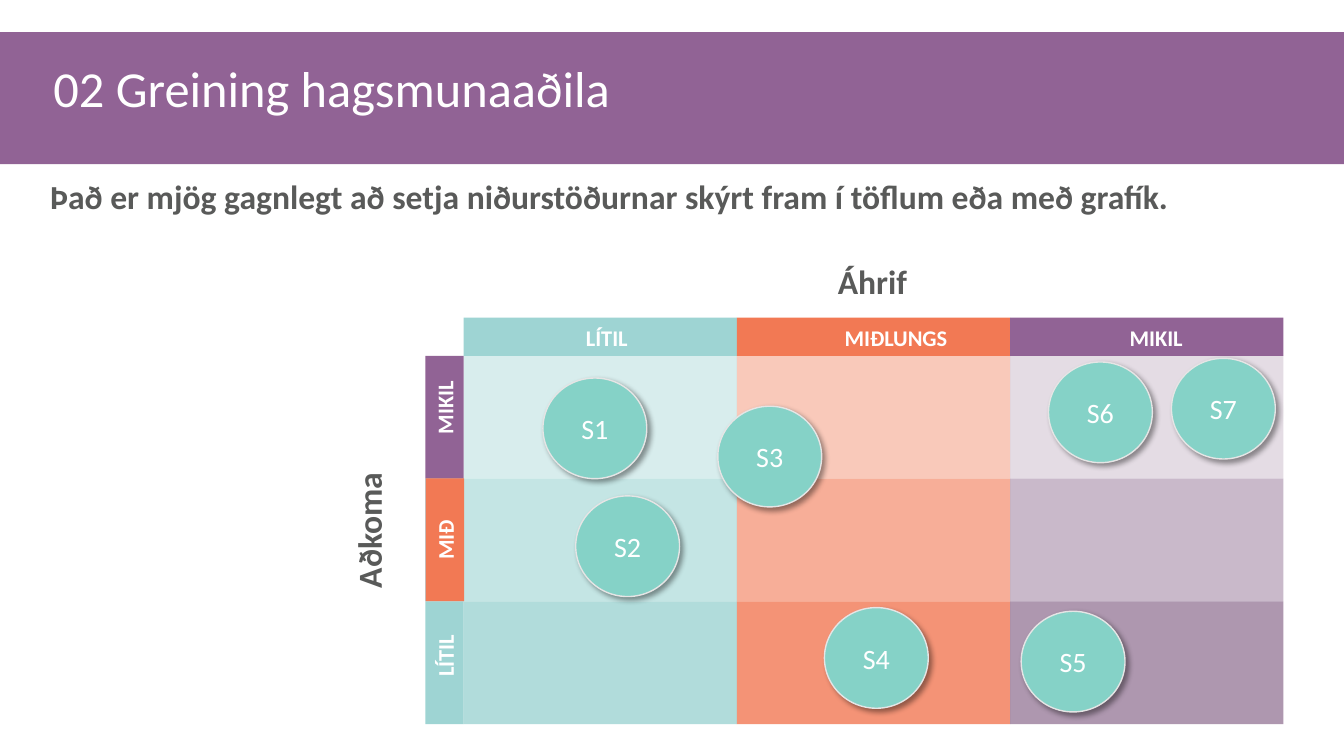
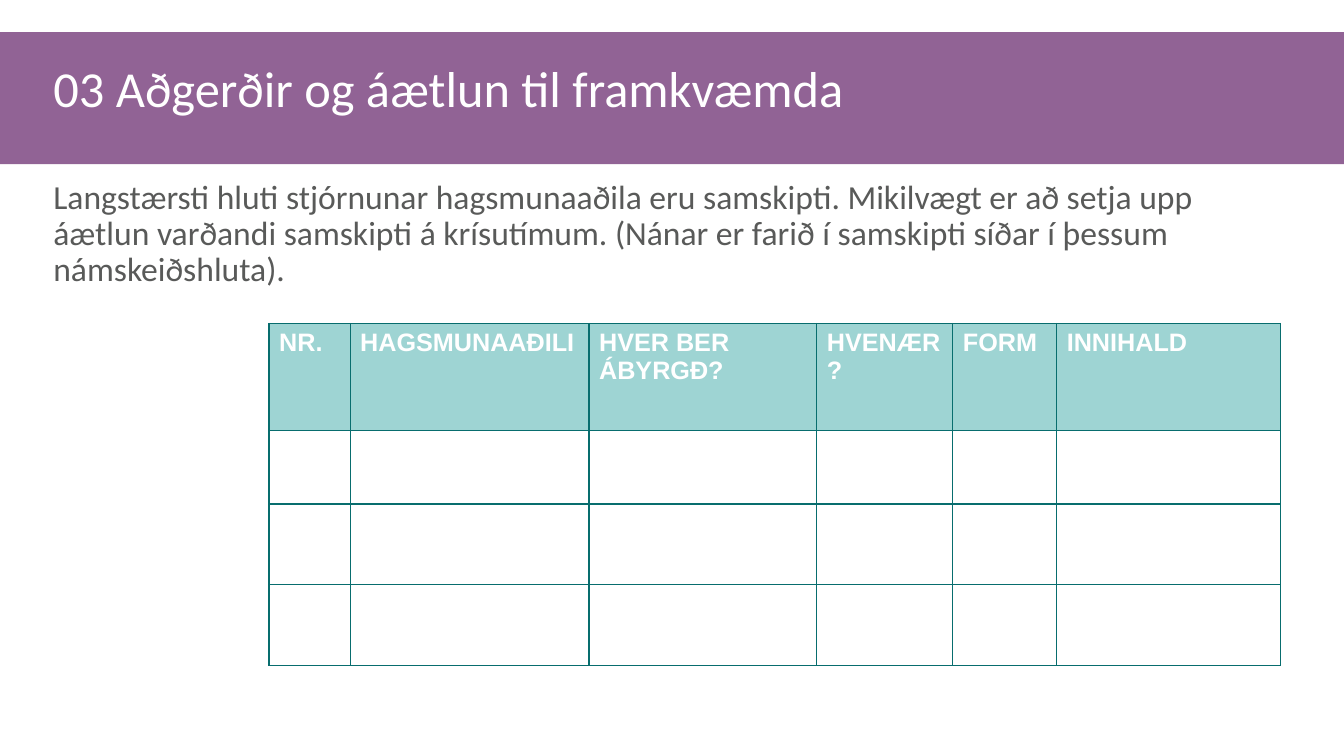
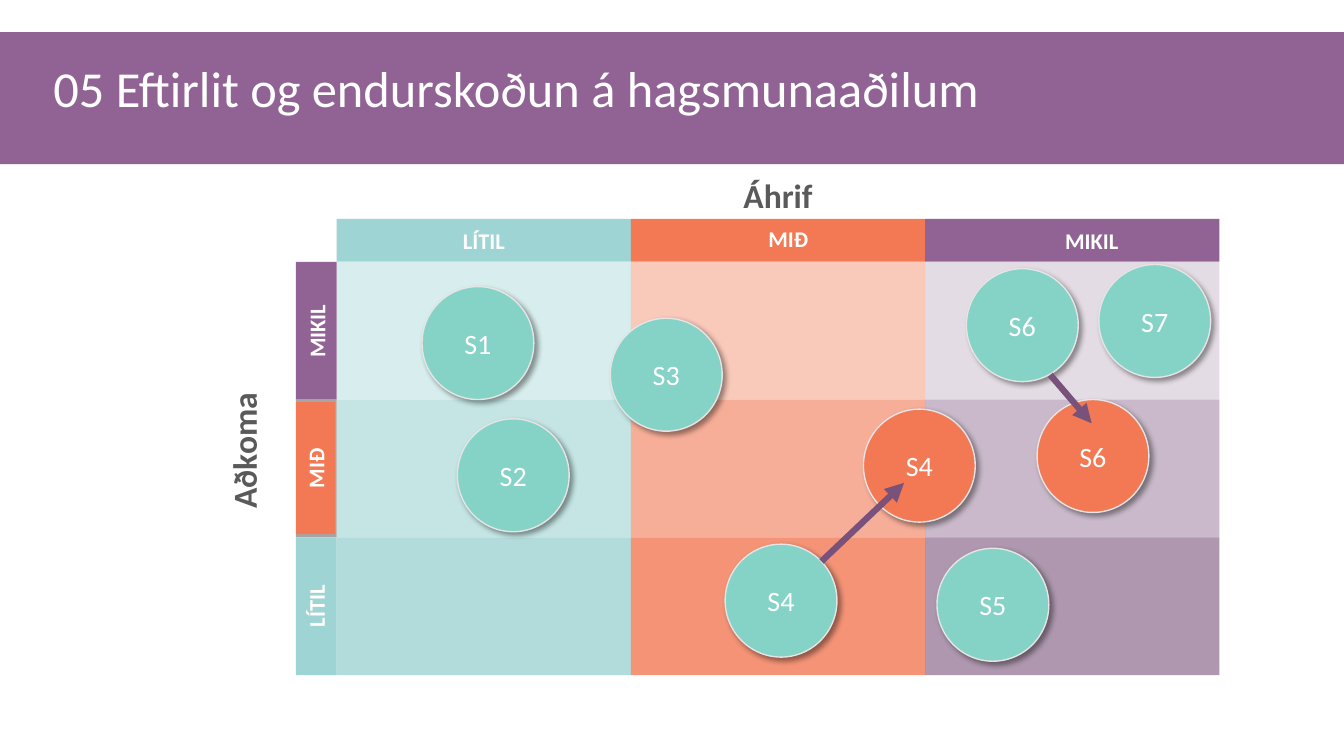
from lxml import etree
from pptx import Presentation
from pptx.dml.color import RGBColor
from pptx.enum import shapes as kind, text as txt
from pptx.oxml import parse_xml
from pptx.oxml.ns import nsdecls, qn
from pptx.util import Pt

PLUM = RGBColor(0x91, 0x63, 0x95)
DEEP = RGBColor(0x79, 0x52, 0x7B)
CORAL = RGBColor(0xF2, 0x79, 0x54)
AQUA = RGBColor(0x9E, 0xD4, 0xD3)
MINT = RGBColor(0x85, 0xD2, 0xC7)
TEAL = RGBColor(0x08, 0x6D, 0x6E)
GREY = RGBColor(0xA5, 0xA5, 0xA5)
PALE = RGBColor(0xE5, 0xE5, 0xE5)
INK = RGBColor(0x59, 0x5A, 0x59)
WHITE = RGBColor(0xFF, 0xFF, 0xFF)

TITLES = ["02 Greining hagsmunaaðila",
          "03 Aðgerðir og áætlun til framkvæmda",
          "05 Eftirlit og endurskoðun á hagsmunaaðilum"]
USEFUL = "Það er mjög gagnlegt að setja niðurstöðurnar skýrt fram í töflum eða með grafík."
COMMS = ("Langstærsti hluti stjórnunar hagsmunaaðila eru samskipti. Mikilvægt er að setja upp "
         "áætlun varðandi samskipti á krísutímum. (Nánar er farið í samskipti síðar í þessum "
         "námskeiðshluta).")
HEADS = ["NR.", "HAGSMUNAAÐILI", "HVER BER ÁBYRGÐ?", "HVENÆR?", "FORM", "INNIHALD"]
COLS = [57.9, 170.7, 162.7, 97.2, 74.2, 160]
ROWS = [76.3, 52.6, 57.6, 57.6]

TINTS = [(AQUA, 40), (CORAL, 40), (DEEP, 20)]
TOPS = [AQUA, CORAL, PLUM]
SIDES = [PLUM, GREY, AQUA]
DOTS = [("S1", .29, .18), ("S2", .41, 1.14), ("S3", .93, .41), ("S7", 2.59, .02),
        ("S6", 2.14, .05), ("S5", 2.04, 2.08), ("S4", 1.32, 2.05)]
MOVED = [("S4", 1.79, 1.07), ("S6", 2.38, 1)]
ARROWS = [(586.8, 401, 645.8, 344.9), (750.2, 267.8, 779.8, 302.4)]

FIRST = dict(x=331.2, y=226.8, wide=195.2, high=87.7, head=27.4, side=27.4,
             tops=[("LÍTIL", 433.4, 240.8), ("MIÐLUNGS", 640, 240.8), ("MIKIL", 825.8, 240.8)],
             sides=[("MIKIL", 317.5, 291.2), ("MIÐ", 317.9, 385.6), ("LÍTIL", 317.9, 468.4)],
             mid=(87.7, 27.4), axes=[("Áhrif", 623.2, 200.9, 0), ("Aðkoma", 263.2, 378.7, 270)])
LAST = dict(x=240.5, y=156.4, wide=210.2, high=98.4, head=30.6, side=29.2,
            tops=[("LÍTIL", 345.6, 171.7), ("MIÐ", 563, 170.3), ("MIKIL", 779.8, 171.7)],
            sides=[("MIKIL", 226.1, 236.5), ("MIÐ", 225.4, 334.4), ("LÍTIL", 225.7, 433.1)],
            mid=(94.3, 27.8), axes=[("Áhrif", 555.8, 139, 0), ("Aðkoma", 173.9, 321.8, 270)])


def write(frame, words, size=16, color=WHITE, bold=False, font="Calibri",
          align=txt.PP_ALIGN.LEFT, anchor=txt.MSO_ANCHOR.TOP, lines=None):
    frame.word_wrap = True
    frame.auto_size = txt.MSO_AUTO_SIZE.NONE
    frame.vertical_anchor = anchor
    para = frame.paragraphs[0]
    para.alignment = align
    para.line_spacing = lines
    run = para.add_run()
    run.text = words
    face = run.font
    face.name, face.size, face.bold = font, Pt(size), bold
    face.color.rgb = color


def block(slide, x, y, w, h, fill, alpha=100, form=kind.MSO_SHAPE.RECTANGLE):
    shape = slide.shapes.add_shape(form, Pt(x), Pt(y), Pt(w), Pt(h))
    shape.shadow.inherit = False
    shape.fill.solid()
    shape.fill.fore_color.rgb = fill
    shape.line.fill.background()
    if alpha < 100:
        tone = shape._element.spPr.find(qn("a:solidFill"))[0]
        etree.SubElement(tone, qn("a:alpha")).set("val", str(alpha * 1000))
    return shape


def label(slide, words, x, y, turn=0, w=140, h=26.6, **fmt):
    box = slide.shapes.add_textbox(Pt(x - w / 2), Pt(y - h / 2), Pt(w), Pt(h))
    box.rotation = turn
    fmt = dict(bold=True, align=txt.PP_ALIGN.CENTER, anchor=txt.MSO_ANCHOR.MIDDLE) | fmt
    write(box.text_frame, words, **fmt)


def dot(slide, words, x, y, w, h, fill):
    disc = block(slide, x, y, w, h, fill, form=kind.MSO_SHAPE.OVAL)
    disc.line.color.rgb = PALE
    disc.line.width = Pt(1)
    disc._element.spPr.find(qn("a:effectLst")).append(parse_xml(
        f'<a:outerShdw {nsdecls("a")} blurRad="50800" dist="38100" dir="2700000" algn="tl" '
        'rotWithShape="0"><a:srgbClr val="000000"><a:alpha val="40000"/></a:srgbClr></a:outerShdw>'))
    write(disc.text_frame, words, size=20, align=txt.PP_ALIGN.CENTER, anchor=txt.MSO_ANCHOR.MIDDLE)


def matrix(slide, x, y, wide, high, head, side, tops, sides, mid, axes, moved=()):
    base = y + head
    for col, (tint, low) in enumerate(TINTS):
        left = x + col * wide
        block(slide, left, y, wide, head, TOPS[col])
        for row in range(3):
            block(slide, left, base + row * high, wide, high, tint, low + 20 * row)
    for row, fill in enumerate(SIDES):
        block(slide, x - side, base + row * high, side, high, fill)
    long, thin = mid
    _, cx, cy = sides[1]
    block(slide, cx - thin / 2, cy - long / 2, thin, long, CORAL)
    for words, cx, cy in tops:
        label(slide, words, cx, cy)
    for words, cx, cy in sides:
        label(slide, words, cx, cy, 270, w=86)
    for words, cx, cy, turn in axes:
        label(slide, words, cx, cy, turn, w=160, h=36, size=24, color=INK,
              anchor=txt.MSO_ANCHOR.BOTTOM)
    for group, fill in ((DOTS, MINT), (moved, CORAL)):
        for words, col, row in group:
            dot(slide, words, x + col * wide, base + row * high, .38 * wide, .82 * high, fill)


def arrow(slide, x1, y1, x2, y2):
    line = slide.shapes.add_connector(kind.MSO_CONNECTOR.STRAIGHT, Pt(x1), Pt(y1), Pt(x2), Pt(y2))
    line.line.color.rgb = DEEP
    line.line.width = Pt(4.5)
    etree.SubElement(line.line._get_or_add_ln(), qn("a:tailEnd")).set("type", "triangle")
    etree.SubElement(line._element.spPr, qn("a:effectLst"))


def intro(slide, words, x, bold=False):
    box = slide.shapes.add_textbox(Pt(x), Pt(125.3), Pt(885), Pt(95))
    write(box.text_frame, words, size=24, color=INK, bold=bold, lines=.9)


def plan(slide):
    grid = slide.shapes.add_table(len(ROWS), len(COLS), Pt(192.2), Pt(231.1),
                                  Pt(sum(COLS)), Pt(sum(ROWS))).table
    grid.first_row = grid.horz_banding = False
    for col, wide in zip(grid.columns, COLS):
        col.width = Pt(wide)
    for row, high in zip(grid.rows, ROWS):
        row.height = Pt(high)
    for cell in grid.iter_cells():
        for edge in "LRTB":
            cell._tc.get_or_add_tcPr().append(parse_xml(
                f'<a:ln{edge} {nsdecls("a")} w="12700"><a:solidFill>'
                f'<a:srgbClr val="{TEAL}"/></a:solidFill></a:ln{edge}>'))
        cell.fill.background()
    for cell, words in zip(grid.rows[0].cells, HEADS):
        cell.fill.solid()
        cell.fill.fore_color.rgb = AQUA
        write(cell.text_frame, words, size=18, bold=True, font="Arial")


def page(deck, words):
    slide = deck.slides.add_slide(deck.slide_layouts[5])
    title = slide.shapes.title
    title.left, title.top, title.width, title.height = Pt(31), Pt(45.4), Pt(903), Pt(46)
    write(title.text_frame, words, size=36, lines=.8)
    return slide


def main():
    deck = Presentation()
    deck.slide_width, deck.slide_height = Pt(960), Pt(540)
    one, two, three = [page(deck, words) for words in TITLES]

    band = block(one, 0, 23, 960, 94.3, PLUM)
    deck.slide_layouts[5].shapes[0]._element.addprevious(band._element)

    intro(one, USEFUL, 28.8, bold=True)
    matrix(one, **FIRST)
    intro(two, COMMS, 31)
    plan(two)
    matrix(three, **LAST, moved=MOVED)
    for ends in ARROWS:
        arrow(three, *ends)
    deck.save("out.pptx")


if __name__ == "__main__":
    main()
